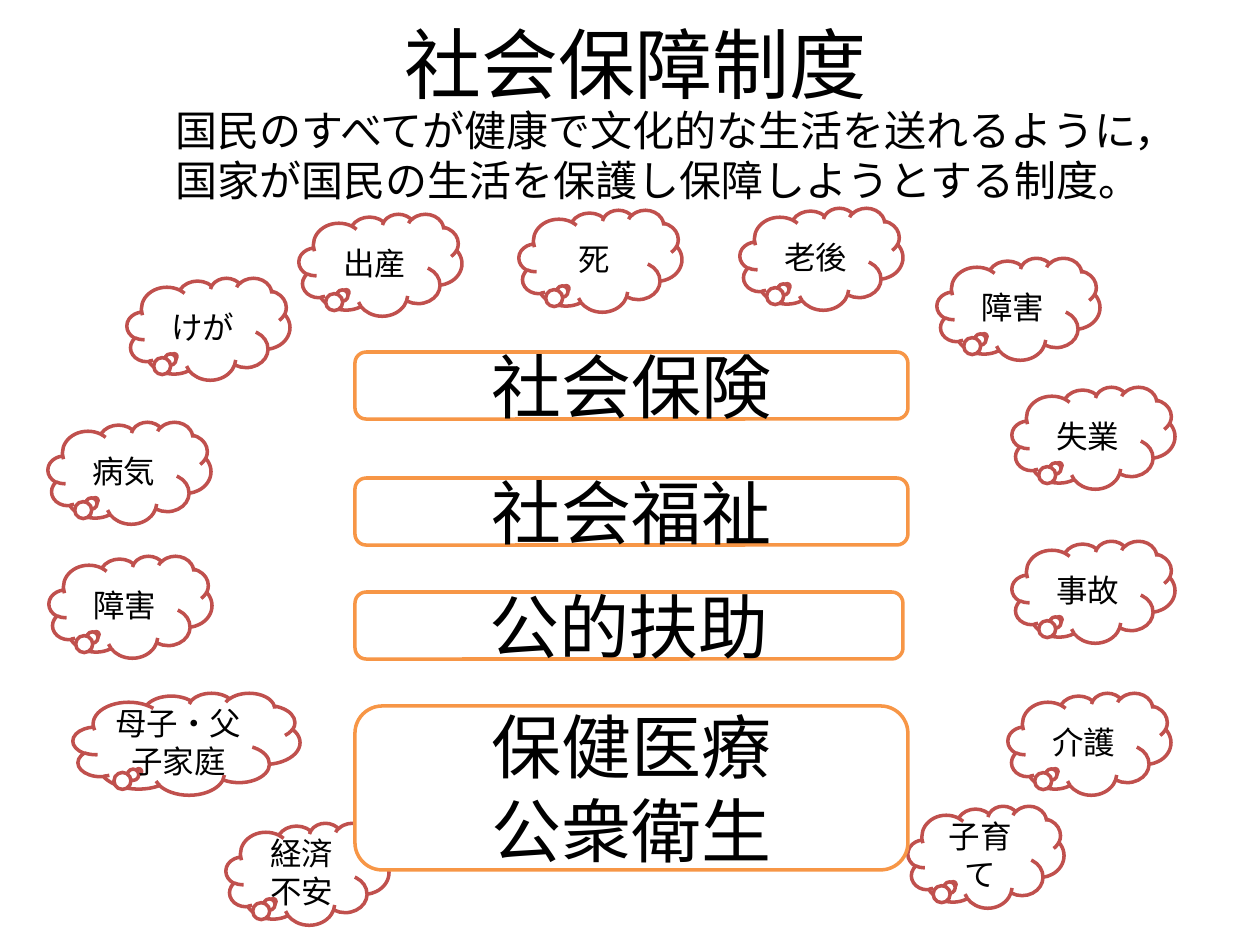
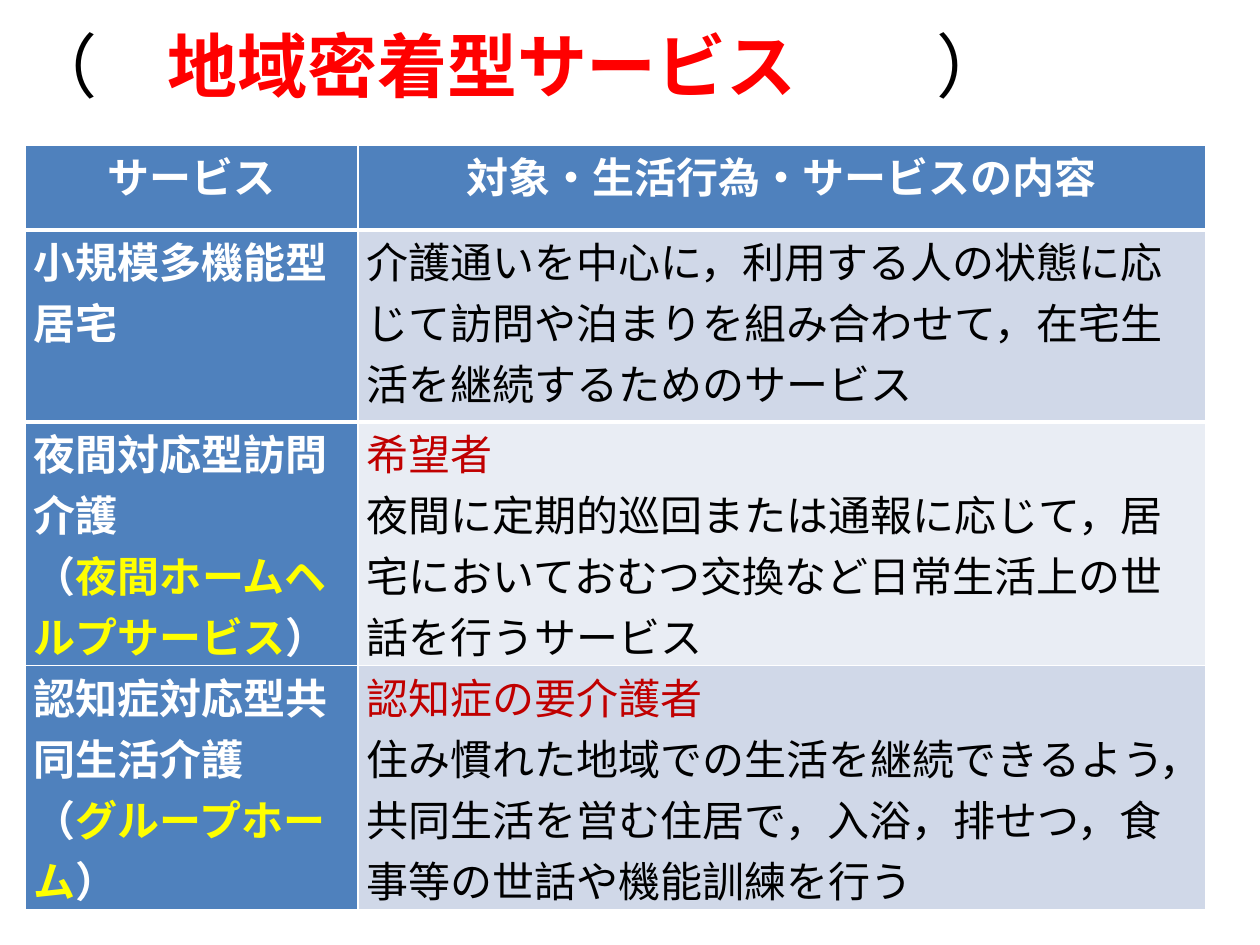
from lxml import etree
from pptx import Presentation
from pptx.dml.color import RGBColor
from pptx.enum.shapes import MSO_SHAPE as Shape
from pptx.enum.text import MSO_ANCHOR as Anchor, PP_ALIGN as Align
from pptx.oxml.ns import qn
from pptx.util import Pt

PX = 914400 / 126
TITLE_ONLY = 5
COLORS = {
    "black": "000000", "white": "FFFFFF", "red": "FF0000", "dark_red": "C00000",
    "yellow": "FFFF00", "cloud": "C0504D", "pillar": "F79646",
    "header": "4F81BD", "band_dark": "D0D8E8", "band_light": "E9EDF4",
}

CLOUD_W, CLOUD_H = 163, 102
CLOUD_TAIL = (-0.21, 0.27)
PILLAR_X, PILLAR_W, PILLAR_H = 355, 553, 67

# Life risks: text, left, top and, where it differs, width
RISKS = [
    ("障害", 937, 258), ("病気", 48, 422), ("経済不安", 226, 823),
    ("死", 519, 210), ("老後", 740, 208), ("子育て", 908, 806, 156),
    ("出産", 299, 214), ("けが", 127, 278), ("母子・父子家庭", 73, 693, 227),
    ("介護", 1008, 693), ("失業", 1012, 387), ("事故", 1012, 541),
    ("障害", 49, 556),
]

# Pillars of the system: lines, top, width, height
PILLARS = [
    (["社会保険"], 352, PILLAR_W, PILLAR_H),
    (["社会福祉"], 478, PILLAR_W, PILLAR_H),
    (["公的扶助"], 592, 548, PILLAR_H),
    (["保健医療", "公衆衛生"], 706, PILLAR_W, 164),
]

# Services: name, nickname, target group, content
SERVICES = [
    ("小規模多機能型居宅", None, None,
     "介護通いを中心に，利用する人の状態に応じて訪問や泊まりを組み合わせて，"
     "在宅生活を継続するためのサービス"),
    ("夜間対応型訪問介護", "夜間ホームヘルプサービス", "希望者",
     "夜間に定期的巡回または通報に応じて，"
     "居宅においておむつ交換など日常生活上の世話を行うサービス"),
    ("認知症対応型共同生活介護", "グループホーム", "認知症の要介護者",
     "住み慣れた地域での生活を継続できるよう，"
     "共同生活を営む住居で，入浴，排せつ，食事等の世話や機能訓練を行う"),
]


def px(*lengths):
    return [round(length * PX) for length in lengths]


def rgb(name):
    return RGBColor.from_string(COLORS[name])


def write(frame, paragraphs, size=24, font="Calibri", color="black", bold=False,
          align=Align.LEFT, anchor=Anchor.MIDDLE, leading=None):
    """Each paragraph is a string or a list of (text, color, bold) runs."""
    frame.word_wrap = True
    frame.vertical_anchor = anchor
    for index, runs in enumerate(paragraphs):
        paragraph = frame.paragraphs[0] if index == 0 else frame.add_paragraph()
        paragraph.alignment = align
        if leading:
            paragraph.line_spacing = Pt(size * leading)
        if isinstance(runs, str):
            runs = [(runs, color, bold)]
        for text, run_color, run_bold in runs:
            run = paragraph.add_run()
            run.text = text
            run.font.size = Pt(size)
            run.font.name = font
            run.font.bold = run_bold
            run.font.color.rgb = rgb(run_color)


def add_titled_slide(deck, box, runs, **text_format):
    slide = deck.slides.add_slide(deck.slide_layouts[TITLE_ONLY])
    title = slide.shapes.title
    title.left, title.top, title.width, title.height = px(*box)
    write(title.text_frame, [runs], **text_format)
    return slide


def add_outlined(slide, kind, box, lines, outline, **text_format):
    shape = slide.shapes.add_shape(kind, *px(*box))
    shape.shadow.inherit = False
    shape.fill.solid()
    shape.fill.fore_color.rgb = rgb("white")
    shape.line.color.rgb = rgb(outline)
    shape.line.width = Pt(2)
    write(shape.text_frame, lines, align=Align.CENTER, **text_format)
    return shape


def add_risk(slide, text, left, top, width=CLOUD_W):
    cloud = add_outlined(slide, Shape.CLOUD_CALLOUT, (left, top, width, CLOUD_H),
                         [text], "cloud", size=18,
                         leading=1.2 if len(text) > 2 else None)
    cloud.adjustments[0], cloud.adjustments[1] = CLOUD_TAIL
    # Odd-sized clouds need narrow margins to hold their text in two lines
    if width != CLOUD_W:
        cloud.text_frame.margin_left, cloud.text_frame.margin_right = px(5, 5)


def add_pillar(slide, lines, top, width, height):
    add_outlined(slide, Shape.ROUNDED_RECTANGLE, (PILLAR_X, top, width, height),
                 lines, "pillar", size=40, leading=1.2 if len(lines) > 1 else None)


def fill_cell(cell, fill, paragraphs, **text_format):
    cell.fill.solid()
    cell.fill.fore_color.rgb = rgb(fill)
    cell.margin_left, cell.margin_right, cell.margin_top, cell.margin_bottom = px(9, 9, 0, 0)
    write(cell.text_frame, paragraphs, **text_format)
    cell.vertical_anchor = Anchor.TOP


def rule_edge(cell, edge, points, color="white"):
    line = etree.Element(qn(f"a:{edge}"), w=str(Pt(points)))
    fill = etree.SubElement(line, qn("a:solidFill"))
    etree.SubElement(fill, qn("a:srgbClr"), val=COLORS[color])
    cell._tc.get_or_add_tcPr().insert(0, line)


def add_service_table(slide):
    widths, heights = px(333, 848), px(85, 192, 228, 228)
    table = slide.shapes.add_table(len(heights), len(widths),
                                   *px(25, 145, 1181, 733)).table
    table.first_col = True
    for column, width in zip(table.columns, widths):
        column.width = width
    for row, height in zip(table.rows, heights):
        row.height = height

    # Header row with a thick rule below it
    for column, heading in enumerate(["サービス", "対象・生活行為・サービスの内容"]):
        fill_cell(table.cell(0, column), "header", [heading],
                  color="white", bold=True, align=Align.CENTER)
        rule_edge(table.cell(0, column), "lnB", 3)
        rule_edge(table.cell(1, column), "lnT", 3)

    # One row per service
    for row, (name, nickname, target, content) in enumerate(SERVICES, 1):
        names, details = [name], [content]
        if nickname:
            names.append([("（", "white", True), (nickname, "yellow", True),
                          ("）", "white", True)])
        if target:
            details.insert(0, [(target, "dark_red", False)])
        fill_cell(table.cell(row, 0), "header", names, color="white", bold=True)
        fill_cell(table.cell(row, 1), "band_dark" if row % 2 else "band_light", details)


def build_system_slide(deck):
    slide = add_titled_slide(deck, (69, 0, 1134, 125), "社会保障制度",
                             size=44, align=Align.CENTER)
    for risk in RISKS:
        add_risk(slide, *risk)
    for pillar in PILLARS:
        add_pillar(slide, *pillar)
    definition = slide.shapes.add_textbox(*px(163, 97, 1012, 115))
    write(definition.text_frame,
          ["国民のすべてが健康で文化的な生活を送れるように，"
           "国家が国民の生活を保護し保障しようとする制度。"],
          font="Arial", leading=1.2)


def build_services_slide(deck):
    slide = add_titled_slide(
        deck, (15, 16, 1134, 110),
        [("（　", "black", False), ("地域密着型サービス　　", "red", True),
         ("）", "black", False)],
        size=40, font="Arial", anchor=Anchor.TOP, leading=1.2)
    add_service_table(slide)


def main():
    deck = Presentation()
    deck.slide_width, deck.slide_height = px(1260, 945)
    build_system_slide(deck)
    build_services_slide(deck)
    deck.save("out.pptx")


if __name__ == "__main__":
    main()
